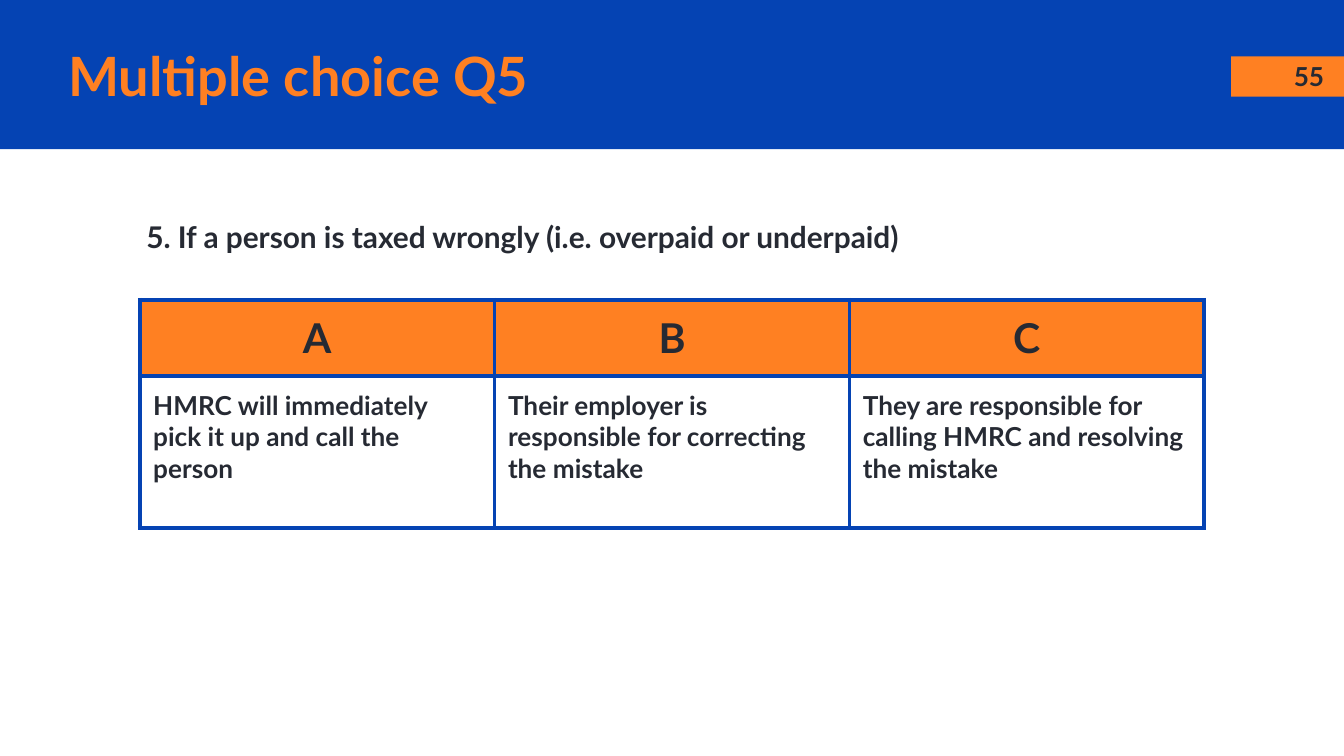
from lxml.etree import SubElement
from pptx import Presentation
from pptx.dml.color import RGBColor
from pptx.enum.shapes import MSO_SHAPE
from pptx.enum.text import MSO_ANCHOR, PP_ALIGN
from pptx.oxml.ns import qn
from pptx.util import Inches, Pt

BLUE = RGBColor(0x05, 0x43, 0xB3)
ORANGE = RGBColor(0xFF, 0x80, 0x22)
INK = RGBColor(0x26, 0x2A, 0x33)
FONT = "Lato"
INSET = Inches(0.1)

ANSWERS = {
    "A": "HMRC will immediately pick it up and call the person",
    "B": "Their employer is responsible for correcting the mistake",
    "C": "They are responsible for calling HMRC and resolving the mistake",
}
COLUMN_WIDTH = 2.64
ROW_HEIGHTS = (0.57, 1.13)


def write_text(frame, text, size=14, color=INK, align=PP_ALIGN.LEFT):
    paragraph = frame.paragraphs[0]
    paragraph.alignment = align
    run = paragraph.add_run()
    run.text = text
    run.font.name = FONT
    run.font.size = Pt(size)
    run.font.bold = True
    run.font.color.rgb = color


def set_margins(target):
    """Apply the common inset to a text frame or a table cell."""
    target.margin_left = target.margin_right = INSET
    target.margin_top = target.margin_bottom = INSET


def add_block(slide, left, top, width, height, color):
    block = slide.shapes.add_shape(
        MSO_SHAPE.RECTANGLE, Inches(left), Inches(top), Inches(width), Inches(height))
    block.shadow.inherit = False
    block.fill.solid()
    block.fill.fore_color.rgb = color
    block.line.fill.background()


def add_text_box(slide, left, top, width, height, text,
                 anchor=MSO_ANCHOR.MIDDLE, **text_format):
    box = slide.shapes.add_textbox(
        Inches(left), Inches(top), Inches(width), Inches(height))
    frame = box.text_frame
    frame.word_wrap = True
    frame.vertical_anchor = anchor
    set_margins(frame)
    write_text(frame, text, **text_format)


def add_borders(cell, color, width):
    """Draw all four cell borders; call before setting the cell's fill."""
    properties = cell._tc.get_or_add_tcPr()
    for side in ("lnL", "lnR", "lnT", "lnB"):
        line = SubElement(properties, qn(f"a:{side}"), w=str(Pt(width)))
        fill = SubElement(line, qn("a:solidFill"))
        SubElement(fill, qn("a:srgbClr"), val=str(color))


def format_cell(cell, text, fill=None, **text_format):
    set_margins(cell)
    add_borders(cell, BLUE, 2.25)
    if fill is None:
        cell.fill.background()
    else:
        cell.fill.solid()
        cell.fill.fore_color.rgb = fill
    write_text(cell.text_frame, text, **text_format)


def add_answer_table(slide, left, top):
    frame = slide.shapes.add_table(
        len(ROW_HEIGHTS), len(ANSWERS), Inches(left), Inches(top),
        Inches(COLUMN_WIDTH * len(ANSWERS)), Inches(sum(ROW_HEIGHTS)))
    table = frame.table
    table.first_row = False
    table.horz_banding = False
    for row, height in zip(table.rows, ROW_HEIGHTS):
        row.height = Inches(height)
    for index, (letter, answer) in enumerate(ANSWERS.items()):
        table.columns[index].width = Inches(COLUMN_WIDTH)
        format_cell(table.cell(0, index), letter, fill=ORANGE,
                    size=22, align=PP_ALIGN.CENTER)
        format_cell(table.cell(1, index), answer)


def main():
    presentation = Presentation()
    presentation.slide_width = Inches(10)
    presentation.slide_height = Inches(10 * 9 / 16)
    slide = presentation.slides.add_slide(presentation.slide_layouts[6])

    add_block(slide, 0, 0, 10, 1.11, BLUE)
    add_block(slide, 9.16, 0.42, 0.84, 0.3, ORANGE)
    add_text_box(slide, 0.99, 1.53, 8.38, 0.47,
                 "5. If a person is taxed wrongly (i.e. overpaid or underpaid)",
                 anchor=MSO_ANCHOR.TOP, size=16)
    add_text_box(slide, 0.41, 0.28, 8.74, 0.56, "Multiple choice Q5",
                 size=29, color=ORANGE)
    add_text_box(slide, 9.48, 0.44, 0.52, 0.25, "55", align=PP_ALIGN.CENTER)
    add_answer_table(slide, 1.04, 2.23)

    presentation.save("out.pptx")


if __name__ == "__main__":
    main()
